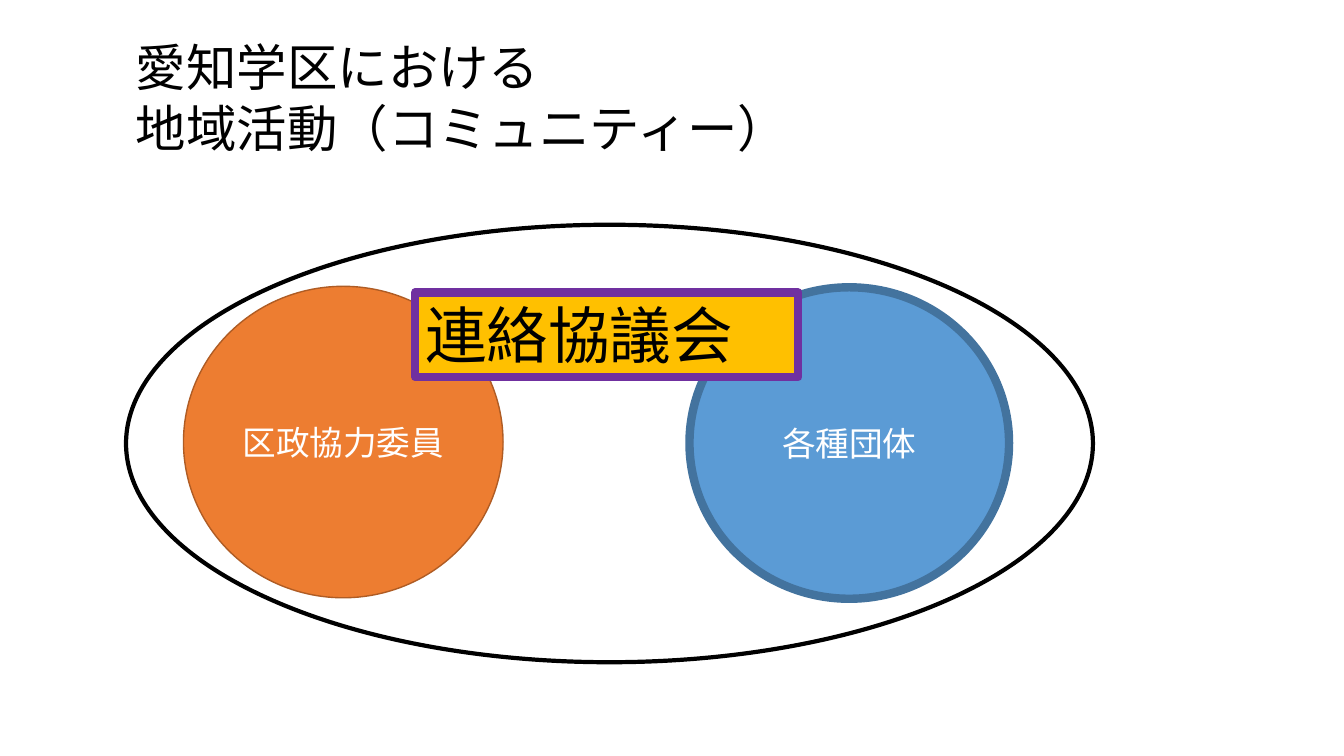
from pptx import Presentation
from pptx.dml.color import RGBColor
from pptx.enum.shapes import MSO_SHAPE as Preset
from pptx.enum.text import MSO_ANCHOR as Anchor, PP_ALIGN as Align
from pptx.util import Inches, Pt

WHITE = RGBColor(0xFF, 0xFF, 0xFF)
BLACK = RGBColor(0x00, 0x00, 0x00)
ORANGE = RGBColor(0xED, 0x7D, 0x31)
DARK_ORANGE = RGBColor(0xAF, 0x5C, 0x24)
BLUE = RGBColor(0x5B, 0x9B, 0xD5)
DARK_BLUE = RGBColor(0x43, 0x73, 0x9E)
GOLD = RGBColor(0xFF, 0xC0, 0x00)
PURPLE = RGBColor(0x70, 0x30, 0xA0)

presentation = Presentation()
presentation.slide_width = Inches(13.33)
presentation.slide_height = Inches(7.5)
slide = presentation.slides.add_slide(presentation.slide_layouts[6])


def box(left, top, width, height):
    """Turn percentages of the slide's size into lengths."""
    across, down = presentation.slide_width / 100, presentation.slide_height / 100
    return int(left * across), int(top * down), int(width * across), int(height * down)


def write(shape, lines, size, color, align, anchor):
    frame = shape.text_frame
    frame.word_wrap = True
    frame.vertical_anchor = anchor
    frame.text = "\n".join(lines)
    for paragraph in frame.paragraphs:
        paragraph.alignment = align
        paragraph.font.name = "Calibri"
        paragraph.font.size = Pt(size)
        paragraph.font.color.rgb = color


GROUP_LABEL = (24, WHITE, Align.CENTER, Anchor.MIDDLE)
COUNCIL_LABEL = (44, BLACK, Align.LEFT, Anchor.TOP)

# preset, place in percent, fill, line, line width, label, label style
diagram = [
    (Preset.OVAL, (13.65, 37.87, 23.78, 41.2), ORANGE, DARK_ORANGE, 1, "区政協力委員", GROUP_LABEL),
    (Preset.OVAL, (51.3, 38, 23.78, 41.2), BLUE, DARK_BLUE, 6, "各種団体", GROUP_LABEL),
    (Preset.OVAL, (9.38, 29.73, 71.94, 57.87), None, BLACK, 3, None, None),
    (Preset.RECTANGLE, (30.9, 38.67, 28.5, 11.2), GOLD, PURPLE, 6, "連絡協議会", COUNCIL_LABEL),
]
for preset, place, fill, line, line_width, label, style in diagram:
    shape = slide.shapes.add_shape(preset, *box(*place))
    shape.shadow.inherit = False
    if fill is None:
        shape.fill.background()
    else:
        shape.fill.solid()
        shape.fill.fore_color.rgb = fill
    shape.line.color.rgb = line
    shape.line.width = Pt(line_width)
    if label:
        write(shape, [label], *style)

title = slide.shapes.add_textbox(*box(9.38, 4.13, 51.1, 17.47))
write(title, ["愛知学区における", "地域活動（コミュニティー）"], 36, BLACK, Align.LEFT, Anchor.TOP)

presentation.save("out.pptx")
